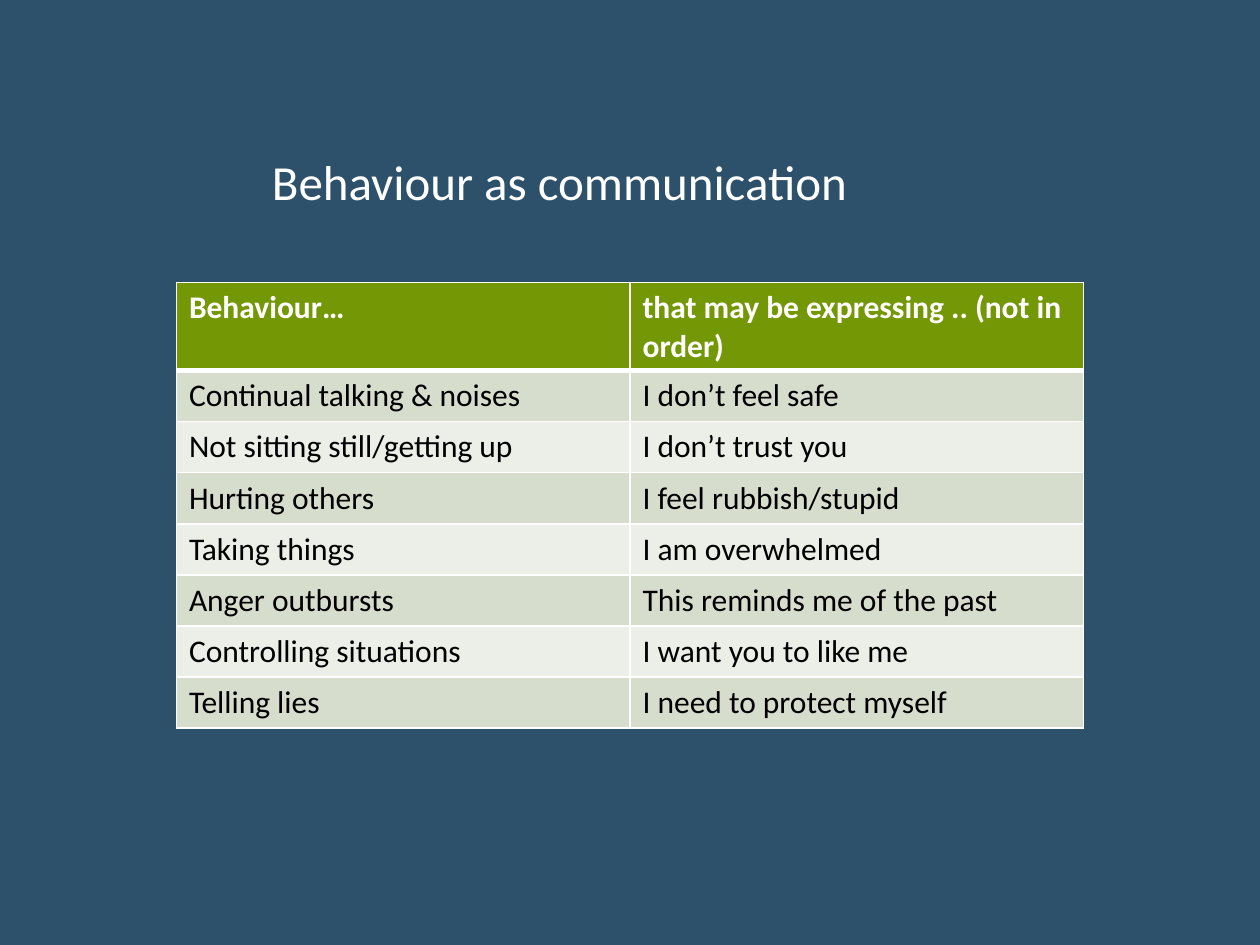
from lxml import etree
from pptx import Presentation
from pptx import util as u
from pptx.dml.color import RGBColor
from pptx.enum import text
from pptx.oxml import ns

WHITE = RGBColor(0xFF, 0xFF, 0xFF)
BLACK = RGBColor(0, 0, 0)
NAVY = RGBColor(0x2D, 0x50, 0x6B)
GREEN = RGBColor(0x74, 0x98, 0x05)
BANDS = [RGBColor(0xEB, 0xEF, 0xE7), RGBColor(0xD6, 0xDD, 0xCC)]
FONT = "Calibri"

ROWS = [
    ("Behaviour…", "that may be expressing .. (not in order)"),
    ("Continual talking & noises", "I don’t feel safe"),
    ("Not sitting still/getting up", "I don’t trust you"),
    ("Hurting others", "I feel rubbish/stupid"),
    ("Taking things", "I am overwhelmed"),
    ("Anger outbursts", "This reminds me of the past"),
    ("Controlling situations", "I want you to like me"),
    ("Telling lies", "I need to protect myself"),
]
HEAD_H, ROW_H = u.Pt(50.4), u.Pt(29.2)
COL_W = u.Inches(3.6)


def add_run(p, words, size, color, bold=False):
    r = p.add_run()
    r.text = words
    r.font.name, r.font.size, r.font.bold = FONT, u.Pt(size), bold
    r.font.color.rgb = color


def add_border(cell, side, points):
    ln = etree.SubElement(cell._tc.get_or_add_tcPr(), ns.qn(f"a:ln{side}"),
                          w=str(u.Pt(points)))
    fill = etree.SubElement(ln, ns.qn("a:solidFill"))
    etree.SubElement(fill, ns.qn("a:srgbClr"), val=str(WHITE))


prs = Presentation()
prs.slide_width, prs.slide_height = u.Inches(10), u.Inches(7.5)
s = prs.slides.add_slide(prs.slide_layouts[6])
s.background.fill.solid()
s.background.fill.fore_color.rgb = NAVY

# Title
sp = s.shapes.add_textbox(u.Inches(2.06), u.Inches(0.75), u.Inches(6.55), u.Inches(0.97))
tf = sp.text_frame
tf.word_wrap = True
tf.vertical_anchor = text.MSO_ANCHOR.BOTTOM
add_run(tf.paragraphs[0], "Behaviour as communication", 28, WHITE)

# Table: one header row, then banded rows
table = s.shapes.add_table(len(ROWS), 2, u.Inches(1.4), u.Inches(2.24), 2 * COL_W,
                           HEAD_H + ROW_H * (len(ROWS) - 1)).table
for column in table.columns:
    column.width = COL_W
for i, row in enumerate(ROWS):
    header = i == 0
    table.rows[i].height = HEAD_H if header else ROW_H
    for j, words in enumerate(row):
        cell = table.cell(i, j)
        for side in "LRTB":
            under_header = (i, side) in ((0, "B"), (1, "T"))
            add_border(cell, side, 3 if under_header else 1)
        cell.fill.solid()
        cell.fill.fore_color.rgb = GREEN if header else BANDS[i % 2]
        add_run(cell.text_frame.paragraphs[0], words, 18,
                WHITE if header else BLACK, header)

prs.save("out.pptx")
